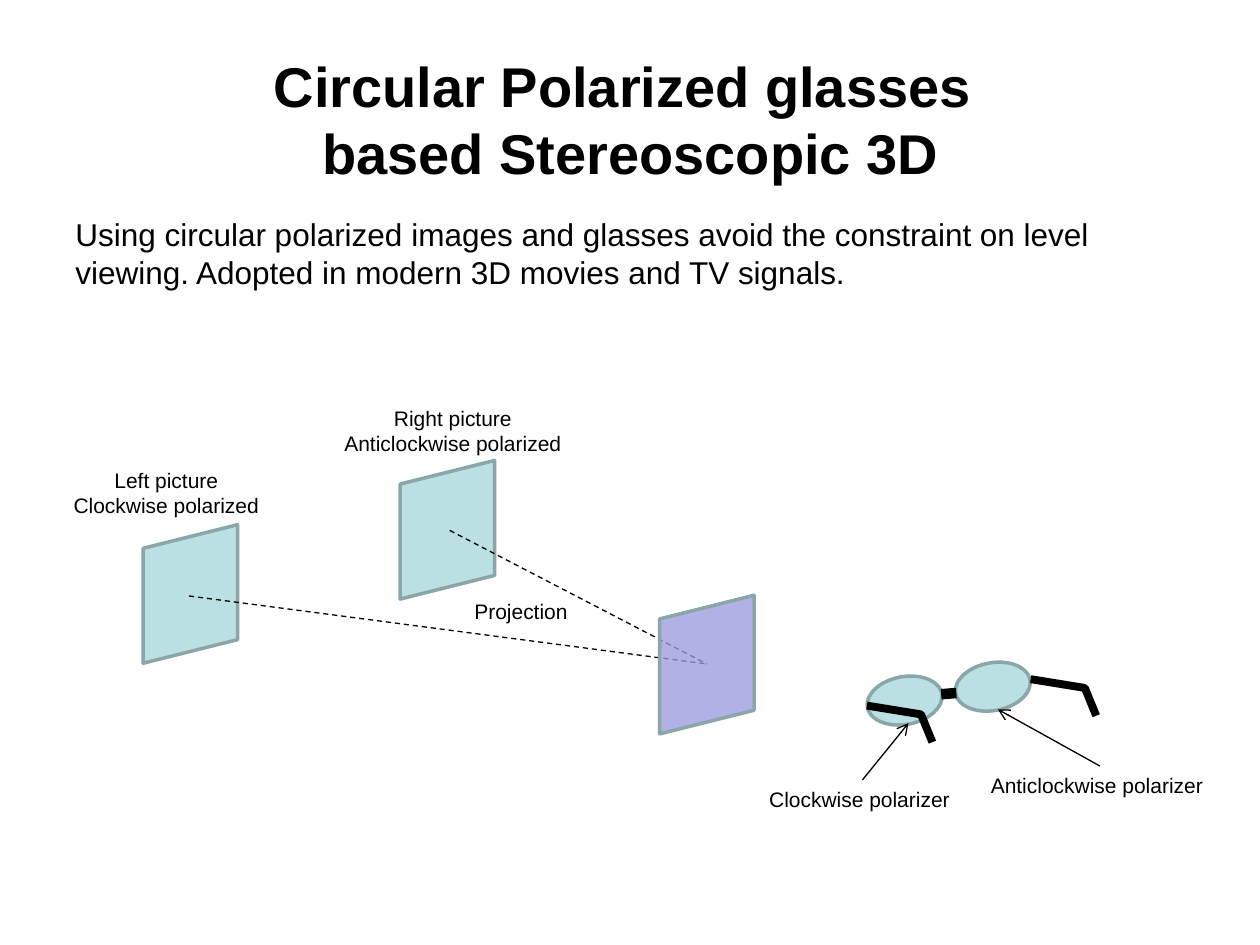
from typing import NamedTuple

from lxml import etree
from pptx import Presentation
from pptx import util as u
from pptx.dml.color import RGBColor
from pptx.enum import dml, shapes, text
from pptx.oxml import ns

Inches, Pt = u.Inches, u.Pt
BLACK, GLASS, EDGE, SCREEN = "000000", "BBE0E3", "8AA6A8", "9C9CDF"


class Label(NamedTuple):
    x: float
    y: float
    w: float
    h: float
    lines: tuple[str, ...]
    size: int = 12
    bold: bool = False
    wrap: bool = False


class Panel(NamedTuple):
    x: float
    y: float
    w: float
    h: float
    kind: shapes.MSO_SHAPE
    rotation: float
    fill: str = GLASS
    opacity: int = 100
    flip: bool = False


def color(value: str) -> RGBColor:
    return RGBColor.from_string(value)


def add_label(s, label: Label):
    box = s.shapes.add_textbox(*map(Inches, label[:4]))
    tf = box.text_frame
    tf.word_wrap = label.wrap
    tf.auto_size = text.MSO_AUTO_SIZE.SHAPE_TO_FIT_TEXT
    for i, line in enumerate(label.lines):
        p = tf.paragraphs[0] if i == 0 else tf.add_paragraph()
        p.alignment = text.PP_ALIGN.LEFT if label.wrap else text.PP_ALIGN.CENTER
        r = p.add_run()
        r.text = line
        r.font.name = "Arial"
        r.font.size = Pt(label.size)
        r.font.bold = label.bold
        r.font.color.rgb = color(BLACK)
    return box


def add_panel(s, panel: Panel):
    sp = s.shapes.add_shape(panel.kind, *map(Inches, panel[:4]))
    sp.shadow.inherit = False
    sp.rotation = panel.rotation
    sp.fill.solid()
    sp.fill.fore_color.rgb = color(panel.fill)
    sp.line.color.rgb = color(EDGE)
    sp.line.width = Pt(2)
    if panel.flip:
        sp._element.spPr.find(ns.qn("a:xfrm")).set("flipV", "1")
    if panel.opacity < 100:
        rgb = sp._element.spPr.find(ns.qn("a:solidFill"))[0]
        etree.SubElement(rgb, ns.qn("a:alpha"), val=str(panel.opacity * 1000))
    return sp


def add_plane(s, x: float, y: float, fill: str = GLASS, opacity: int = 100):
    return add_panel(s, Panel(x, y, 1.1, 0.75, shapes.MSO_SHAPE.PARALLELOGRAM,
                              270, fill, opacity, True))


def add_line(s, start: tuple[float, float], end: tuple[float, float],
             width: float = 0.75, dashed: bool = False, arrow: bool = False):
    line = s.shapes.add_connector(shapes.MSO_CONNECTOR.STRAIGHT,
                                  *map(Inches, start + end))
    line.line.color.rgb = color(BLACK)
    line.line.width = Pt(width)
    if dashed:
        line.line.dash_style = dml.MSO_LINE.DASH
    if arrow:
        etree.SubElement(line.line._get_or_add_ln(), ns.qn("a:tailEnd"), type="arrow")
    etree.SubElement(line._element.spPr, ns.qn("a:effectLst"))
    return line


def add_temple(s, x: float, y: float):
    """Draw one side arm of the glasses, starting at its hinge."""
    builder = s.shapes.build_freeform(Inches(x), Inches(y))
    bends = [(0.43, 0.07), (0.52, 0.29)]
    builder.add_line_segments([(Inches(x + dx), Inches(y + dy)) for dx, dy in bends],
                              close=False)
    sp = builder.convert_to_shape()
    sp.shadow.inherit = False
    sp.fill.background()
    sp.line.color.rgb = color(BLACK)
    sp.line.width = Pt(4.5)


def main() -> None:
    prs = Presentation()
    prs.slide_width, prs.slide_height = Inches(10), Inches(7.5)
    s = prs.slides.add_slide(prs.slide_layouts[6])

    # Title and introduction
    add_label(s, Label(2.05, 0.36, 5.91, 1.18,
                       ("Circular Polarized glasses ", "based Stereoscopic 3D"),
                       size=32, bold=True))
    add_label(s, Label(0.5, 1.66, 8.66, 0.71,
                       ("Using circular polarized images and glasses avoid the "
                        "constraint on level viewing. Adopted in modern 3D movies "
                        "and TV signals.",), size=18, wrap=True))

    # Left and right pictures
    add_plane(s, 3, 3.83)
    add_plane(s, 0.96, 4.34)
    add_label(s, Label(0.48, 3.66, 1.68, 0.51, ("Left picture", "Clockwise polarized")))
    add_label(s, Label(2.63, 3.17, 1.93, 0.51,
                       ("Right picture", "Anticlockwise polarized")))

    # Projection onto the translucent screen
    for start in ((3.57, 4.21), (1.5, 4.73)):
        add_line(s, start, (5.61, 5.27), dashed=True)
    add_plane(s, 5.06, 4.9, SCREEN, 78)
    add_label(s, Label(3.66, 4.7, 0.95, 0.3, ("Projection",)))

    # Glasses: lenses, bridge and side arms
    for x, y in ((6.88, 5.37), (7.58, 5.26)):
        add_panel(s, Panel(x, y, 0.6, 0.38, shapes.MSO_SHAPE.OVAL, 349.5))
    add_line(s, (7.47, 5.51), (7.59, 5.5), width=6)

    # Polarizer labels, each pointing at its lens
    polarizers = (
        (Label(6, 6.19, 1.69, 0.3, ("Clockwise polarizer ",)), (7.21, 5.74)),
        (Label(7.76, 6.08, 1.94, 0.3, ("Anticlockwise polarizer ",)), (7.92, 5.63)),
    )
    for label, target in polarizers:
        box = add_label(s, label)
        arrow = add_line(s, (label.x + label.w / 2, label.y), target, arrow=True)
        arrow.begin_connect(box, 0)

    for x, y in ((8.18, 5.39), (6.88, 5.6)):
        add_temple(s, x, y)

    prs.save("out.pptx")


if __name__ == "__main__":
    main()
